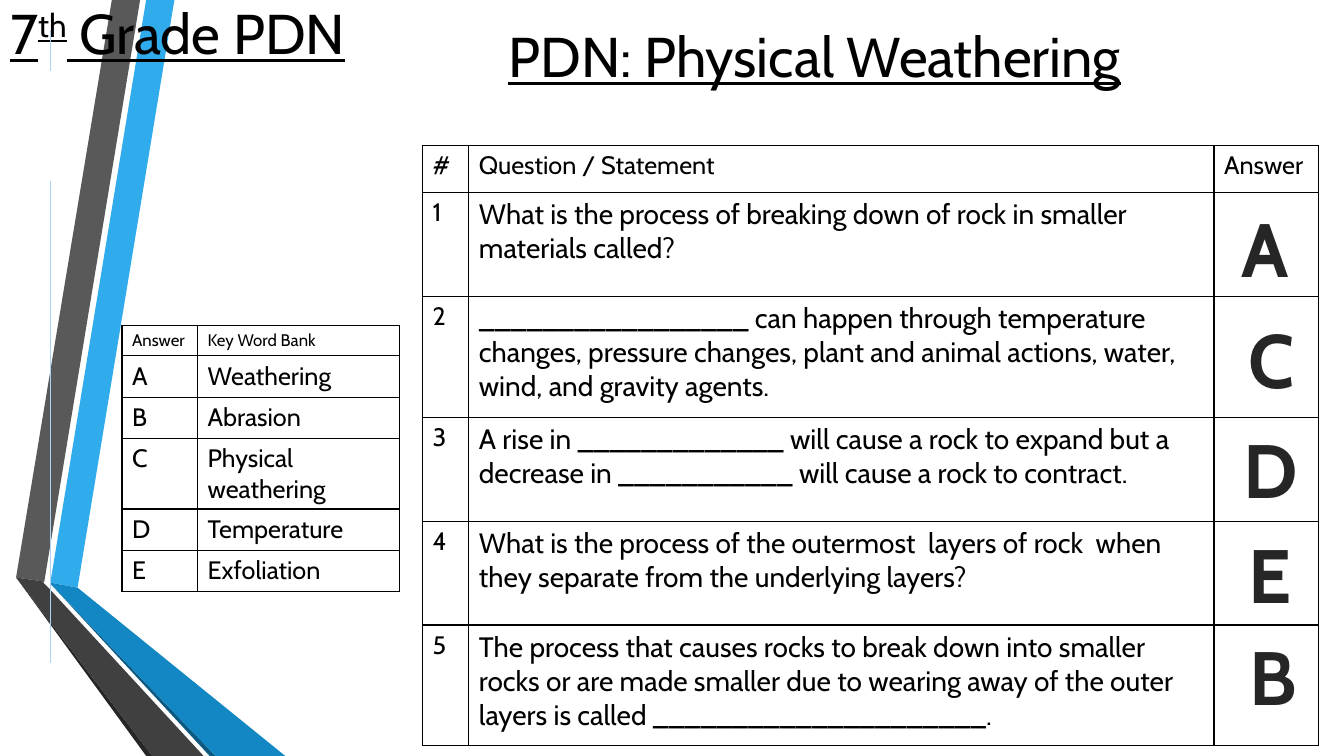
from lxml.etree import SubElement
from pptx import Presentation
from pptx.dml.color import RGBColor
from pptx.enum.shapes import MSO_CONNECTOR
from pptx.enum.text import MSO_ANCHOR, MSO_AUTO_SIZE, PP_ALIGN
from pptx.oxml.ns import qn
from pptx.util import Pt

FONT = "Cabin"
BLACK = "000000"
UNIT = 9144  # EMU in one px, 100 px to the inch

# Content
HEADING = [("7", False), ("th", True), (" Grade PDN", False)]
TOPIC = "PDN: Physical Weathering"
BANK = [
    ("Answer", "Key Word Bank"),
    ("A", "Weathering"),
    ("B", "Abrasion"),
    ("C", "Physical weathering"),
    ("D", "Temperature"),
    ("E", "Exfoliation"),
]
QUIZ = [
    ("#", "Question / Statement", "Answer"),
    ("1", "What is the process of breaking down of rock in smaller materials called?", ""),
    ("2", "_________________ can happen through temperature changes, pressure changes, "
          "plant and animal actions, water, wind, and gravity agents.", ""),
    ("3", "A rise in _____________ will cause a rock to expand but a decrease in "
          "___________ will cause a rock to contract.", ""),
    ("4", "What is the process of the outermost  layers of rock  when they separate "
          "from the underlying layers?", ""),
    ("5", "The process that causes rocks to break down into smaller rocks or are made "
          "smaller due to wearing away of the outer layers is called "
          "_____________________.", ""),
]
# letter, left, top, width
KEYS = [("A", 1222, 195, 66), ("C", 1228, 306, 60), ("D", 1223, 415, 68),
        ("E", 1228, 519, 57), ("B", 1229, 620, 63)]
# colour, outline points
BANDS = [
    ("30ACEC", [(50, 578), (77, 583), (173, 0), (145, 0)]),
    ("595959", [(139, 0), (111, 0), (16, 573), (44, 577)]),
    ("262626", [(16, 573), (145, 750), (151, 750)]),
    ("0C5A82", [(50, 579), (208, 750), (214, 750)]),
    ("1287C3", [(50, 579), (214, 750), (283, 750), (77, 583), (50, 578)]),
    ("404040", [(202, 750), (48, 583), (43, 578), (44, 577), (16, 573), (151, 750)]),
]
RULES = [(658, 180), (70, 30)]  # start and end heights
RULE_X = 50


def px(n):
    return int(n * UNIT)


def rgb(code):
    return RGBColor.from_string(code)


def style(font, size, color=BLACK, bold=False, under=False):
    font.name, font.size, font.color.rgb = FONT, Pt(size), rgb(color)
    font.bold, font.underline = bold, under


def add_line(parent, tag, width, color):
    line = SubElement(parent, qn(tag), w=str(Pt(width)))
    fill = SubElement(line, qn("a:solidFill"))
    SubElement(fill, qn("a:srgbClr"), val=color)
    return line


def add_grid(slide, rows, left, top, widths, heights, size_of):
    frame = slide.shapes.add_table(len(rows), len(widths), px(left), px(top),
                                   px(sum(widths)), px(sum(heights)))
    table = frame.table
    table.first_row = table.horz_banding = False
    for col, width in zip(table.columns, widths):
        col.width = px(width)
    for i, row in enumerate(rows):
        table.rows[i].height = px(heights[i])
        for j, text in enumerate(row):
            cell = table.cell(i, j)
            cell.text = text
            style(cell.text_frame.paragraphs[0].font, size_of(i, j))
            props = cell._tc.get_or_add_tcPr()
            for side in "LRTB":
                add_line(props, "a:ln" + side, 1, BLACK)
            cell.fill.background()


def add_text(slide, text, box, size, color=BLACK, **look):
    shape = slide.shapes.add_textbox(*map(px, box))
    par = shape.text_frame.paragraphs[0]
    par.text = text
    par.alignment = PP_ALIGN.CENTER
    style(par.font, size, color, **look)
    return shape.text_frame


deck = Presentation()
deck.slide_width, deck.slide_height = px(1333), px(750)
slide = deck.slides.add_slide(deck.slide_layouts[5])

# Title
title = slide.shapes.title
title.left, title.top, title.width, title.height = map(px, (0, -24, 1096, 112))
frame = title.text_frame
frame.auto_size = MSO_AUTO_SIZE.NONE
frame.vertical_anchor = MSO_ANCHOR.MIDDLE
head = frame.paragraphs[0]
head.alignment = PP_ALIGN.LEFT
style(head.font, 40, under=True)
for text, raised in HEADING:
    run = head.add_run()
    run.text = text
    if raised:
        run._r.get_or_add_rPr().set("baseline", "30000")

# Side bands, kept behind the title
for depth, (color, points) in enumerate(BANDS):
    path = slide.shapes.build_freeform(*points[0], scale=UNIT)
    path.add_line_segments(points[1:], close=True)
    band = path.convert_to_shape()
    band.shadow.inherit = False
    band.fill.solid()
    band.fill.fore_color.rgb = rgb(color)
    band.line.fill.background()
    slide.shapes._spTree.insert(2 + depth, band._element)

# Topic
topic = add_text(slide, TOPIC, (308, 3, 1000, 104), 40, under=True)
topic.word_wrap = True
topic.vertical_anchor = MSO_ANCHOR.MIDDLE

# Word bank and questions
add_grid(slide, BANK, 121, 323, (75, 200), [24] + [41] * 5,
         lambda i, j: 18 if i else 12)
add_grid(slide, QUIZ, 419, 144, (46, 739, 104), (47, 103, 120, 103, 103, 120),
         lambda i, j: 20 if i and j == 1 else 18)

# Thin upright rules
for start, end in RULES:
    rule = slide.shapes.add_connector(MSO_CONNECTOR.STRAIGHT, px(RULE_X), px(start),
                                      px(RULE_X), px(end))
    rule.line.color.rgb = rgb("AED2F4")
    rule.line.width = Pt(0.75)
    SubElement(rule._element.spPr, qn("a:effectLst"))

# Answer letters with a white outline
for letter, left, top, width in KEYS:
    frame = add_text(slide, letter, (left, top, width, 101), 54, "262626", bold=True)
    frame.word_wrap = False
    frame.auto_size = MSO_AUTO_SIZE.SHAPE_TO_FIT_TEXT
    props = frame.paragraphs[0].runs[0]._r.get_or_add_rPr()
    add_line(props, "a:ln", 1.06, "FFFFFF")

deck.save("out.pptx")
